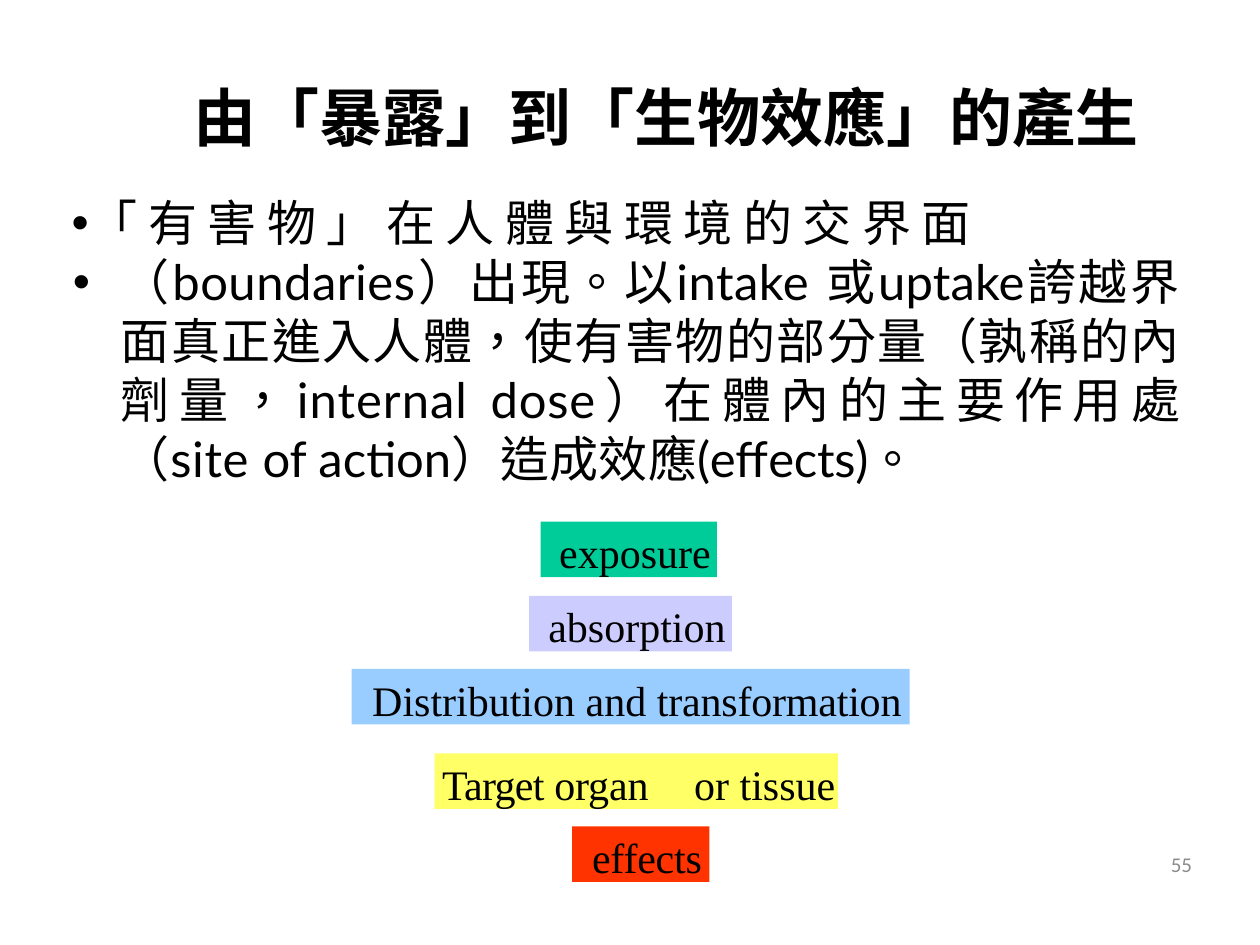
from dataclasses import dataclass
from typing import Optional

from lxml.etree import SubElement
from pptx import Presentation
from pptx.dml.color import RGBColor
from pptx.enum.shapes import MSO_SHAPE
from pptx.enum.text import MSO_ANCHOR, MSO_AUTO_SIZE, PP_ALIGN
from pptx.oxml.ns import qn
from pptx.util import Inches, Pt

BLACK = RGBColor(0x00, 0x00, 0x00)
GRAY = RGBColor(0x8C, 0x8C, 0x8C)
GREEN = RGBColor(0x00, 0xCC, 0x99)
LAVENDER = RGBColor(0xCC, 0xCC, 0xFF)
SKY = RGBColor(0x99, 0xCC, 0xFF)
YELLOW = RGBColor(0xFF, 0xFF, 0x66)
RED = RGBColor(0xFF, 0x33, 0x00)

CJK_BOLD = "Noto Sans CJK SC"
CJK = "Noto Sans CJK TC"
LATIN = "Lato"
SERIF = "Times New Roman"


@dataclass
class Piece:
    """A stretch of text with its letter spacing in points."""
    text: str
    spacing: float = 0
    font: Optional[str] = None


@dataclass
class Stage:
    """One coloured step between exposure and effects."""
    left: float
    top: float
    width: float
    fill: RGBColor
    pieces: list[Piece]
    margin: float = 0.1
    tab: Optional[float] = None


STAGES = [
    Stage(4.29, 4.14, 1.4, GREEN, [Piece("exposure")]),
    Stage(4.2, 4.73, 1.61, LAVENDER, [Piece("absorption")]),
    Stage(2.79, 5.31, 4.43, SKY,
          [Piece("Distribution and "), Piece("transformation", -0.1)]),
    # A narrower margin keeps the tabbed text on one line
    Stage(3.45, 5.98, 3.2, YELLOW,
          [Piece("Target ", -0.4), Piece("organ\t", -0.1), Piece("or tissue")],
          margin=0.04, tab=1.94),
    Stage(4.54, 6.56, 1.09, RED, [Piece("effects", -0.1)]),
]

BOUNDARY = [Piece("「 有 害 物 」 在 人 體 與 環 境 的 交 界 面", -0.1)]
MECHANISM = [
    Piece("（", 0.3), Piece("boundaries", 0.3, LATIN), Piece("）出現。以", 0.3),
    Piece("intake ", 0.3, LATIN), Piece("或", 0.1), Piece("uptake", 0.1, LATIN),
    Piece("誇越界面真正進入人體，使有害物的部分", 0.5),
    Piece("量（孰稱的內劑量，", 0.6), Piece("internal ", 0.6, LATIN),
    Piece("dose", 0.5, LATIN), Piece("）在體", 0.5), Piece("內的主要作用處（", 0.4),
    Piece("site ", 0.4, LATIN), Piece("of ", 0, LATIN), Piece("action", 0.1, LATIN),
    Piece("）造成效", 0.1), Piece("應", -0.1), Piece("(effects)", -0.1, LATIN),
    Piece("。", -0.1),
]


def write(paragraph, pieces: list[Piece], *, size: float, font: str,
          color: RGBColor = BLACK, bold: bool = False, align=PP_ALIGN.LEFT,
          margin: float = 0, indent: float = 0, before: float = 0,
          bullet: Optional[str] = None, tab: Optional[float] = None) -> None:
    """Fill a paragraph with pieces of text in one format."""
    properties = paragraph._p.get_or_add_pPr()
    properties.set("marL", str(Inches(margin)))
    properties.set("indent", str(Inches(indent)))
    paragraph.alignment = align
    paragraph.space_before = Pt(before)
    if bullet:
        SubElement(properties, qn("a:buFont")).set("typeface", "Arial")
        SubElement(properties, qn("a:buChar")).set("char", bullet)
    if tab:
        stops = SubElement(properties, qn("a:tabLst"))
        stop = SubElement(stops, qn("a:tab"))
        stop.set("pos", str(Inches(tab)))
        stop.set("algn", "l")
    for piece in pieces:
        run = paragraph.add_run()
        run.text = piece.text
        run.font.name = piece.font or font
        run.font.size = Pt(size)
        run.font.bold = bold
        run.font.color.rgb = color
        character = run._r.get_or_add_rPr()
        character.set("lang", "zh-TW" if run.font.name in (CJK, CJK_BOLD) else "en-US")
        character.set("spc", str(round(piece.spacing * 100)))


def place(shape, left: float, top: float, width: float, height: float) -> None:
    shape.left, shape.top = Inches(left), Inches(top)
    shape.width, shape.height = Inches(width), Inches(height)


def set_insets(frame, top: float = 0) -> None:
    frame.margin_left = frame.margin_right = frame.margin_bottom = 0
    frame.margin_top = Inches(top)


def add_text_box(slide, left: float, top: float, width: float, height: float):
    box = slide.shapes.add_textbox(Inches(left), Inches(top), Inches(width), Inches(height))
    box.text_frame.word_wrap = True
    return box.text_frame


def add_stage(group, stage: Stage) -> None:
    shape = group.shapes.add_shape(
        MSO_SHAPE.RECTANGLE, Inches(stage.left), Inches(stage.top),
        Inches(stage.width), Inches(0.44))
    shape.shadow.inherit = False
    shape.fill.solid()
    shape.fill.fore_color.rgb = stage.fill
    shape.line.fill.background()
    frame = shape.text_frame
    set_insets(frame, top=0.04)
    frame.word_wrap = True
    frame.vertical_anchor = MSO_ANCHOR.TOP
    frame.auto_size = MSO_AUTO_SIZE.SHAPE_TO_FIT_TEXT
    write(frame.paragraphs[0], stage.pieces, size=24, font=SERIF,
          align=PP_ALIGN.CENTER, margin=stage.margin, tab=stage.tab)


def main() -> None:
    presentation = Presentation()
    presentation.slide_width, presentation.slide_height = Inches(10), Inches(7.5)
    slide = presentation.slides.add_slide(presentation.slide_layouts[5])

    # Title
    title = slide.shapes.title
    place(title, 1.06, 0.3, 8.44, 1.25)
    set_insets(title.text_frame)
    title.text_frame.vertical_anchor = MSO_ANCHOR.MIDDLE
    write(title.text_frame.paragraphs[0], [Piece("由「暴露」到「生物效應」的產生")],
          size=36, font=CJK_BOLD, bold=True, align=PP_ALIGN.CENTER, margin=0.01)

    # Explanation
    body = add_text_box(slide, 0.47, 1.48, 9, 4.95)
    write(body.paragraphs[0], BOUNDARY, size=28, font=CJK,
          margin=0.01, indent=-0.38, bullet="•", tab=0.39)
    write(body.add_paragraph(), MECHANISM, size=28, font=CJK, align=PP_ALIGN.JUSTIFY,
          margin=0.39, indent=-0.38, before=0.2, bullet="•")

    # Stages from exposure to effects
    group = slide.shapes.add_group_shape()
    for stage in STAGES:
        add_stage(group, stage)

    # Page number
    number = add_text_box(slide, 7.23, 6.66, 2.33, 0.4)
    number.vertical_anchor = MSO_ANCHOR.MIDDLE
    write(number.paragraphs[0], [Piece("55")], size=12, font="Calibri",
          color=GRAY, align=PP_ALIGN.RIGHT)

    presentation.save("out.pptx")


if __name__ == "__main__":
    main()
